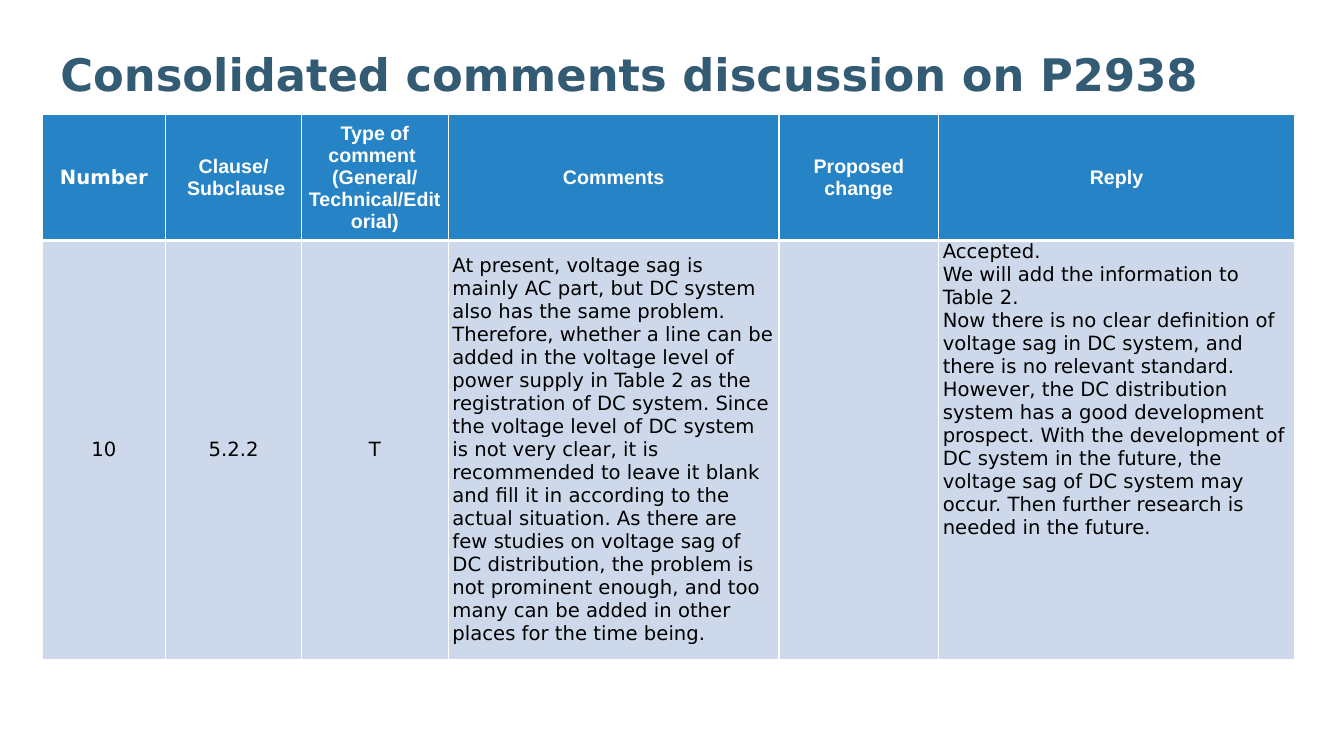
from dataclasses import dataclass

from lxml.etree import SubElement
from pptx import Presentation
from pptx.dml.color import RGBColor
from pptx.enum.text import MSO_ANCHOR as Anchor, PP_ALIGN as Align
from pptx.oxml.ns import qn
from pptx.util import Emu, Pt

PX = 9525  # EMU per px, 96 px to the inch
COLORS = {
    "title": "335B74",
    "header": "2683C6",
    "body": "CDD9EA",
    "light": "FFFFFF",
    "dark": "000000",
}
SANS, ARIAL = "DejaVu Sans", "Arial"
COLUMN_WIDTHS = [118, 129, 140, 315, 152, 339]
ROW_HEIGHTS = [120, 399]


@dataclass
class CellText:
    lines: list[str]
    font: str = SANS
    align: Align = Align.CENTER
    anchor: Anchor = Anchor.MIDDLE
    side_inset: int = 7
    end_inset: int = 0
    space_after: int = 0


HEADERS = [
    CellText(["Number"]),
    CellText(["Clause/", " Subclause"], ARIAL),
    CellText(["Type of comment ", "(General/ Technical/Editorial)"], ARIAL),
    CellText(["Comments"], ARIAL),
    CellText(["Proposed change"], ARIAL),
    CellText(["Reply"], ARIAL),
]
COMMENT = (
    "At present, voltage sag is mainly AC part, but DC system also has the same problem. "
    "Therefore, whether a line can be added in the voltage level of power supply in Table 2 "
    "as the registration of DC system. Since the voltage level of DC system is not very clear, "
    "it is recommended to leave it blank and fill it in according to the actual situation. "
    "As there are few studies on voltage sag of DC distribution, the problem is not prominent "
    "enough, and too many can be added in other places for the time being."
)
REPLY = [
    "Accepted.",
    "We will add the information to Table 2.",
    "Now there is no clear definition of voltage sag in DC system, and there is no relevant "
    "standard. However, the DC distribution system has a good development prospect. With the "
    "development of DC system in the future, the voltage sag of DC system may occur. Then "
    "further research is needed in the future.",
]
ANSWERS = [
    CellText(["10"], space_after=12),
    CellText(["5.2.2"], space_after=12),
    CellText(["T"], side_inset=4, end_inset=5),
    CellText([COMMENT], align=Align.LEFT, side_inset=4, end_inset=5),
    CellText([]),
    CellText(REPLY, align=Align.LEFT, anchor=Anchor.TOP, side_inset=4),
]


def px(length: int) -> Emu:
    return Emu(length * PX)


def add_run(para, text: str, font: str, size: int, color: str, bold: bool) -> None:
    run = para.add_run()
    run.text = text
    run.font.name = font
    run.font.size = Pt(size)
    run.font.bold = bold
    run.font.color.rgb = RGBColor.from_string(COLORS[color])


def set_borders(cell, top: int, bottom: int) -> None:
    """Draw white cell edges; widths are in points."""
    properties = cell._tc.get_or_add_tcPr()
    edges = {"a:lnL": 1, "a:lnR": 1, "a:lnT": top, "a:lnB": bottom}
    for position, (tag, width) in enumerate(edges.items()):
        line = SubElement(properties, qn(tag), w=str(Pt(width)))
        fill = SubElement(line, qn("a:solidFill"))
        SubElement(fill, qn("a:srgbClr"), val=COLORS["light"])
        properties.insert(position, line)  # edges come before the cell fill


def fill_cell(cell, content: CellText, is_header: bool) -> None:
    cell.fill.solid()
    cell.fill.fore_color.rgb = RGBColor.from_string(COLORS["header" if is_header else "body"])
    set_borders(cell, top=1 if is_header else 3, bottom=3 if is_header else 1)
    cell.vertical_anchor = content.anchor
    cell.margin_left = cell.margin_right = px(content.side_inset)
    cell.margin_top = cell.margin_bottom = px(content.end_inset)
    frame = cell.text_frame
    for index, line in enumerate(content.lines):
        para = frame.add_paragraph() if index else frame.paragraphs[0]
        para.alignment = content.align
        if content.space_after:
            para.space_after = Pt(content.space_after)
        add_run(para, line, content.font, 14, "light" if is_header else "dark", is_header)


def add_title(page, text: str) -> None:
    box = page.shapes.add_textbox(px(48), px(36), px(1156), px(120))
    frame = box.text_frame
    frame.word_wrap = True
    frame.vertical_anchor = Anchor.TOP
    frame.margin_top = px(8)
    add_run(frame.paragraphs[0], text, SANS, 32, "title", True)


def add_comment_table(page) -> None:
    rows = [HEADERS, ANSWERS]
    table = page.shapes.add_table(
        len(rows), len(COLUMN_WIDTHS), px(40), px(109),
        px(sum(COLUMN_WIDTHS)), px(sum(ROW_HEIGHTS)),
    ).table
    table.horz_banding = False
    for column, width in zip(table.columns, COLUMN_WIDTHS):
        column.width = px(width)
    for row, height in zip(table.rows, ROW_HEIGHTS):
        row.height = px(height)
    for row_index, contents in enumerate(rows):
        for column_index, content in enumerate(contents):
            fill_cell(table.cell(row_index, column_index), content, row_index == 0)


def main() -> None:
    deck = Presentation()
    deck.slide_width, deck.slide_height = px(1280), px(720)
    page = deck.slides.add_slide(deck.slide_layouts[6])
    # Heading
    add_title(page, "Consolidated comments discussion on P2938")
    # Comment and reply
    add_comment_table(page)
    deck.save("out.pptx")


if __name__ == "__main__":
    main()
